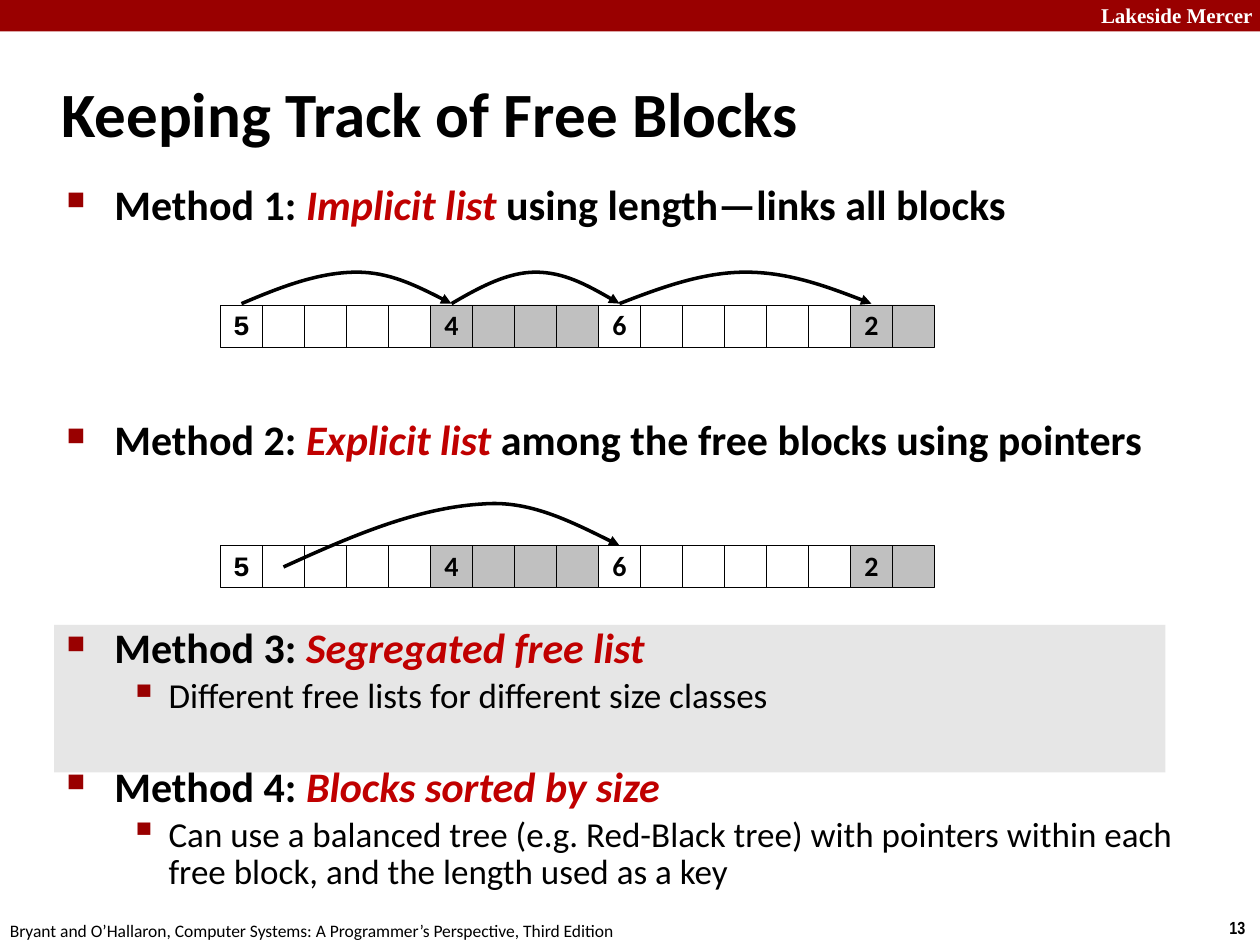
from dataclasses import dataclass

from lxml.etree import SubElement
from pptx import Presentation
from pptx.dml.color import RGBColor
from pptx.enum.shapes import MSO_SHAPE as Preset
from pptx.enum.text import MSO_ANCHOR as Anchor, PP_ALIGN as Align
from pptx.oxml.ns import qn
from pptx.util import Inches, Pt


@dataclass(frozen=True)
class Theme:
    black: str = "000000"
    white: str = "FFFFFF"
    bar: str = "990000"
    emphasis: str = "C00000"
    band: str = "E6E6E6"
    allocated: str = "C0C0C0"
    font: str = "Calibri"
    title: int = 36
    method: int = 24
    detail: int = 20
    cell: int = 16
    header: int = 12
    footer: int = 10


THEME = Theme()
CELL = 1 / 3
BLOCKS = [(5, False), (4, True), (6, False), (2, True)]  # length, allocated

# Level: bullet, bullet size in percent, left margin, hanging indent
LEVELS = [("■", 60, 0.38, 0.38), ("▪", 110, 0.81, 0.31)]

# Level, space before, line spacing, plain start, emphasis, plain end
OUTLINE = [
    (0, 2, 1, "Method 1: ", "Implicit list ", "using length—links all blocks"),
    (0, 105.5, 1, "Method 2: ", "Explicit list ",
     "among the free blocks using pointers"),
    (0, 95, 0.83, "Method 3: ", "Segregated free list", ""),
    (1, 4, 0.88, "Different free lists for different size classes", "", ""),
    (0, 30, 0.83, "Method 4: ", "Blocks sorted by size", ""),
    (1, 4, 0.88, "Can use a balanced tree (e.g. Red-Black tree) with pointers "
     "within each free block, and the length used as a key", "", ""),
]


def add_run(paragraph, text, size, color=THEME.black, bold=False,
            italic=False, name=THEME.font):
    run = paragraph.add_run()
    run.text = text
    font = run.font
    font.size, font.name, font.bold, font.italic = Pt(size), name, bold, italic
    font.color.rgb = RGBColor.from_string(color)


def add_text_box(slide, box, wrap=True, anchor=Anchor.TOP):
    shape = slide.shapes.add_textbox(*map(Inches, box))
    frame = shape.text_frame
    frame.word_wrap = wrap
    frame.vertical_anchor = anchor
    return frame


def add_rectangle(slide, box, fill, line=None):
    shape = slide.shapes.add_shape(Preset.RECTANGLE, *map(Inches, box))
    shape.shadow.inherit = False
    shape.fill.solid()
    shape.fill.fore_color.rgb = RGBColor.from_string(fill)
    if line:
        shape.line.color.rgb = RGBColor.from_string(line)
        shape.line.width = Pt(0.25)
    else:
        shape.line.fill.background()
    return shape


def set_bullet(paragraph, level):
    character, percent, margin, hanging = LEVELS[level]
    paragraph.level = level
    properties = paragraph._p.get_or_add_pPr()
    properties.set("marL", str(Inches(margin)))
    properties.set("indent", str(-Inches(hanging)))
    color = SubElement(properties, qn("a:buClr"))
    SubElement(color, qn("a:srgbClr"), val=THEME.bar)
    SubElement(properties, qn("a:buSzPct"), val=str(percent * 1000))
    SubElement(properties, qn("a:buChar"), char=character)


def add_header(slide, box):
    left, top, width, height = box
    add_rectangle(slide, box, THEME.bar)
    frame = add_text_box(slide, (left + width - 1.36, top - 0.03, 1.43, 0.3))
    add_run(frame.paragraphs[0], "Lakeside Mercer", THEME.header, THEME.white,
            bold=True, name="Times New Roman")


def add_footer(slide, box):
    left, top, width, height = box
    source = add_text_box(slide, (left, top, 5.08, height), wrap=False)
    add_run(source.paragraphs[0],
            "Bryant and O’Hallaron, Computer Systems: "
            "A Programmer’s Perspective, Third Edition", THEME.footer)
    number = add_text_box(
        slide, (left + width - 0.34, top - 0.02, 0.34, height), wrap=False)
    add_run(number.paragraphs[0], "13", THEME.footer, bold=True,
            name="Arial Narrow")


def add_title(slide, box):
    frame = add_text_box(slide, box, anchor=Anchor.MIDDLE)
    add_run(frame.paragraphs[0], "Keeping Track of Free Blocks", THEME.title,
            bold=True)


def add_outline(slide, box):
    frame = add_text_box(slide, box)
    for index, (level, before, spacing, start, term, end) in enumerate(OUTLINE):
        paragraph = frame.add_paragraph() if index else frame.paragraphs[0]
        paragraph.space_before = Pt(before)
        paragraph.line_spacing = spacing
        set_bullet(paragraph, level)
        size = THEME.detail if level else THEME.method
        add_run(paragraph, start, size, bold=not level)
        if term:
            add_run(paragraph, term, size, THEME.emphasis, True, True)
        if end:
            add_run(paragraph, end, size, bold=True)


def add_heap(slide, left, top):
    """A row of memory words; the first word of each block holds its length."""
    position = 0
    for length, allocated in BLOCKS:
        fill = THEME.allocated if allocated else THEME.white
        for word in range(length):
            cell = add_rectangle(
                slide, (left + position * CELL, top, CELL, CELL),
                fill, THEME.black)
            position += 1
            if word == 0:
                frame = cell.text_frame
                frame.word_wrap = False
                frame.vertical_anchor = Anchor.MIDDLE
                paragraph = frame.paragraphs[0]
                paragraph.alignment = Align.CENTER
                first = position == 1
                paragraph.line_spacing = 0.94 if first else 0.98
                add_run(paragraph, str(length), THEME.cell, bold=True,
                        name="Courier New" if first else THEME.font)


def add_pointer(slide, start, peak, end, heights):
    """A two-part Bezier arrow, with its points evenly spaced on each side."""
    xs = [start + (peak - start) * step / 3 for step in range(3)]
    xs += [peak + (end - peak) * step / 3 for step in range(4)]
    points = [(Inches(x), Inches(y)) for x, y in zip(xs, heights)]
    builder = slide.shapes.build_freeform(*points[0], scale=1.0)
    builder.add_line_segments(points[1:], close=False)
    shape = builder.convert_to_shape()
    shape.shadow.inherit = False
    shape.fill.background()
    shape.line.color.rgb = RGBColor.from_string(THEME.black)
    shape.line.width = Pt(2)
    SubElement(shape.line._get_or_add_ln(), qn("a:tailEnd"), type="triangle")

    # Join each three line points into one cubic curve
    outline = next(shape._element.iter(qn("a:path")))
    segments = outline.findall(qn("a:lnTo"))
    for first in range(0, len(segments), 3):
        curve = SubElement(outline, qn("a:cubicBezTo"))
        for segment in segments[first:first + 3]:
            curve.append(segment[0])
            outline.remove(segment)


def add_implicit_list(slide, left, top):
    add_heap(slide, left, top)
    heights = [top - rise for rise in (0.01, 0.14, 0.26, 0.26, 0.26, 0.14, 0.01)]
    center = left + CELL / 2
    for start, peak, end in [(0, 2.75, 5), (5, 7, 9), (9, 12, 15)]:
        add_pointer(slide, *(center + word * CELL for word in (start, peak, end)),
                    heights)


def add_explicit_list(slide, left, top):
    add_heap(slide, left, top)
    heights = [top - rise for rise in (-0.17, 0.07, 0.3, 0.33, 0.36, 0.18, 0)]
    center = left + CELL / 2
    add_pointer(slide, *(center + word * CELL for word in (1, 5.75, 9)), heights)


def main():
    presentation = Presentation()
    presentation.slide_width, presentation.slide_height = Inches(10), Inches(7.5)
    slide = presentation.slides.add_slide(presentation.slide_layouts[6])

    # Frame of the page
    add_header(slide, (0, 0, 10, 0.25))
    add_footer(slide, (-0.02, 7.25, 10.02, 0.27))

    # Highlight behind the third method, then the text
    add_rectangle(slide, (0.43, 4.96, 8.82, 1.17), THEME.band)
    add_title(slide, (0.39, 0.48, 8.3, 0.83))
    add_outline(slide, (0.43, 1.37, 9.07, 5.88))

    # Diagrams
    add_implicit_list(slide, 1.75, 2.42)
    add_explicit_list(slide, 1.75, 4.33)

    presentation.save("out.pptx")


if __name__ == "__main__":
    main()
